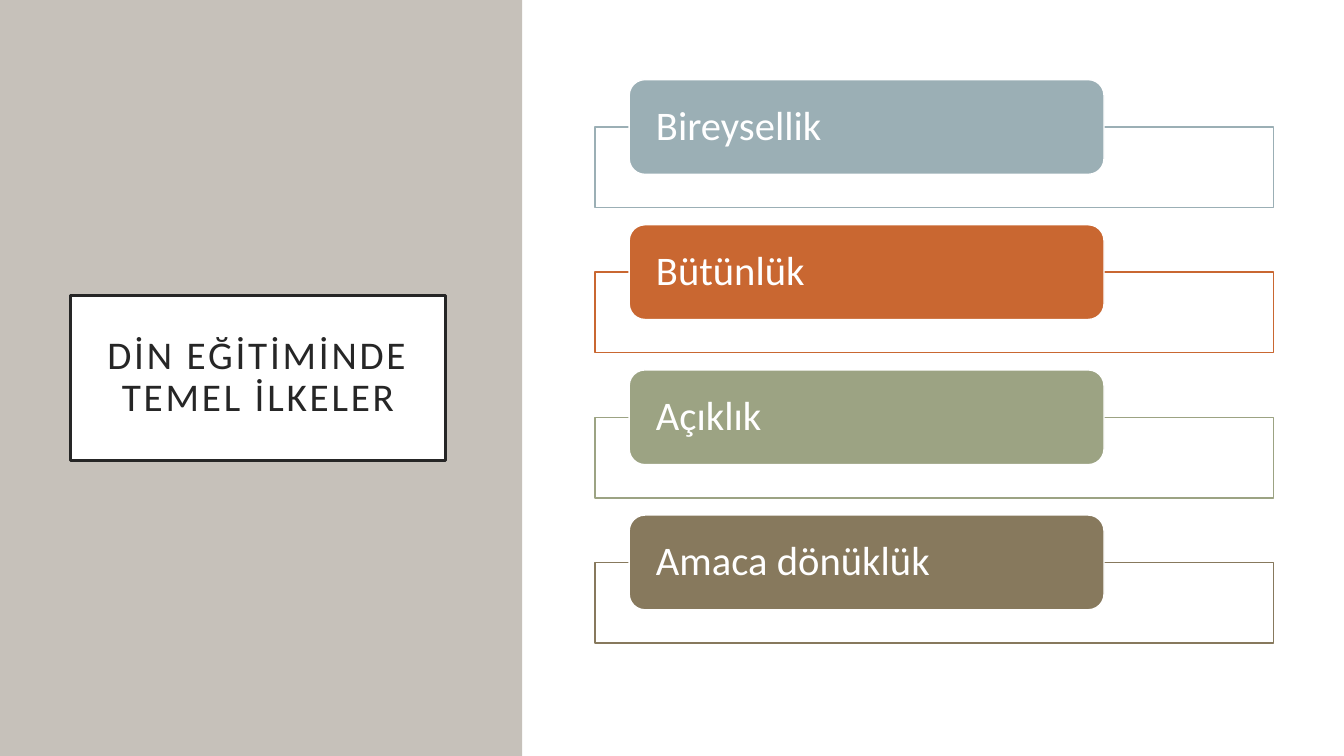
from pptx import Presentation
from pptx.dml.color import RGBColor
from pptx.enum.shapes import MSO_SHAPE
from pptx.enum.text import MSO_ANCHOR, MSO_AUTO_SIZE, PP_ALIGN
from pptx.util import Emu, Pt

EMU_PER_PX = 9144
PRINCIPLES = [
    ("Bireysellik", "9BAFB5"),
    ("Bütünlük", "C96731"),
    ("Açıklık", "9CA383"),
    ("Amaca dönüklük", "87795D"),
]
FIRST_ROW_TOP = 79
ROW_PITCH = 144


def px(length):
    """Convert a length in px to EMU."""
    return Emu(length * EMU_PER_PX)


def color(hex_string):
    """Return the colour for a hex string."""
    return RGBColor.from_string(hex_string)


def paint(shape, fill, line=None, line_width=1):
    """Set the fill and outline of a shape."""
    shape.fill.solid()
    shape.fill.fore_color.rgb = color(fill)
    if line:
        shape.line.color.rgb = color(line)
        shape.line.width = Pt(line_width)
    else:
        shape.line.fill.background()


def write_text(shape, text, *, size, font_color, align, inset_x, inset_y=0, tracking=0):
    """Write one formatted paragraph, vertically centred in a shape."""
    frame = shape.text_frame
    frame.text = text
    frame.word_wrap = True
    frame.auto_size = MSO_AUTO_SIZE.NONE
    frame.vertical_anchor = MSO_ANCHOR.MIDDLE
    frame.margin_left = frame.margin_right = px(inset_x)
    frame.margin_top = frame.margin_bottom = px(inset_y)
    paragraph = frame.paragraphs[0]
    paragraph.alignment = align
    paragraph.line_spacing = 0.9
    font = paragraph.runs[0].font
    font.name = "Calibri"
    font.size = Pt(size)
    font.color.rgb = color(font_color)
    if tracking:
        font._element.set("spc", str(tracking * 100))


def add_box(slide, kind, left, top, width, height, **style):
    """Add a painted preset shape without a shadow."""
    shape = slide.shapes.add_shape(kind, px(left), px(top), px(width), px(height))
    shape.shadow.inherit = False
    paint(shape, **style)
    return shape


def add_side_panel(slide):
    """Add the left panel behind everything else."""
    panel = add_box(slide, MSO_SHAPE.RECTANGLE, 0, 0, 518, 750, fill="C6C1BA")
    slide.shapes._spTree.insert(2, panel._element)


def format_title(slide, text):
    """Place and format the framed title."""
    title = slide.shapes.title
    title.left, title.top, title.width, title.height = map(px, (70, 293, 372, 164))
    paint(title, "FFFFFF", line="262626", line_width=2.5)
    write_text(title, text, size=28, font_color="262626", align=PP_ALIGN.CENTER,
               inset_x=20, inset_y=20, tracking=2)


def add_principle(slide, top, text, accent):
    """Add an outlined frame with its rounded label on top."""
    add_box(slide, MSO_SHAPE.RECTANGLE, 590, top + 47, 673, 80, fill="FFFFFF", line=accent)
    label = add_box(slide, MSO_SHAPE.ROUNDED_RECTANGLE, 624, top, 471, 94,
                    fill=accent, line="FFFFFF")
    write_text(label, text, size=29, font_color="FFFFFF", align=PP_ALIGN.LEFT, inset_x=22)


def main():
    """Build and save the slide."""
    presentation = Presentation()
    presentation.slide_width = px(1333)
    presentation.slide_height = px(750)
    slide = presentation.slides.add_slide(presentation.slide_layouts[5])
    add_side_panel(slide)
    format_title(slide, "DİN EĞİTİMİNDE TEMEL İLKELER")
    for row, (text, accent) in enumerate(PRINCIPLES):
        add_principle(slide, FIRST_ROW_TOP + row * ROW_PITCH, text, accent)
    presentation.save("out.pptx")


if __name__ == "__main__":
    main()
